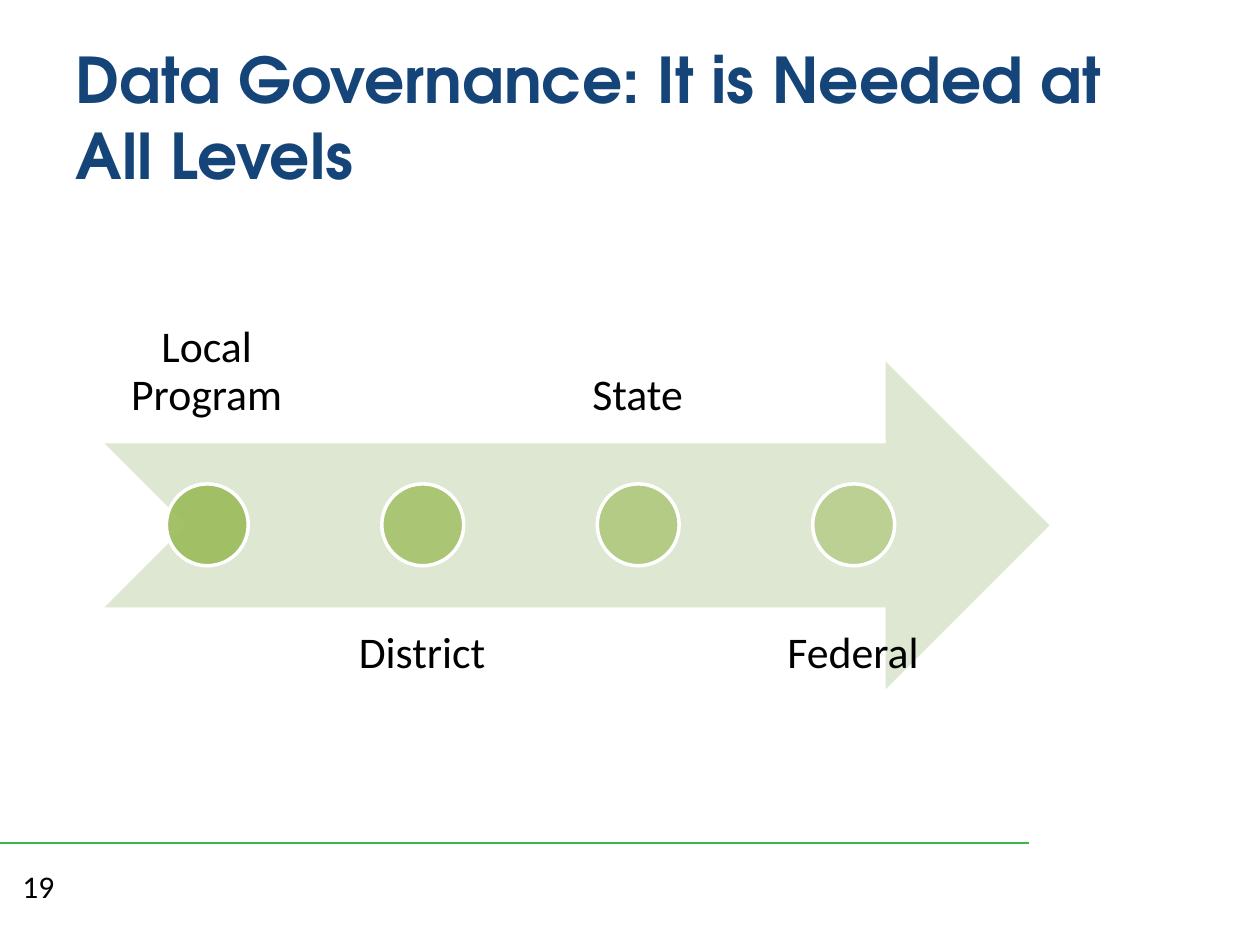
from pptx import Presentation
from pptx.dml.color import RGBColor
from pptx.enum.shapes import MSO_CONNECTOR, MSO_SHAPE
from pptx.enum.text import MSO_ANCHOR, MSO_AUTO_SIZE, PP_ALIGN
from pptx.oxml.ns import qn
from pptx.util import Inches, Pt
from lxml.etree import SubElement


def color(code):
    return RGBColor.from_string(code)


def apply(target, values):
    for name, value in values.items():
        setattr(target, name, value)


class Deck:
    HEAD = {"name": "TeX Gyre Adventor", "size": Pt(36), "bold": True}
    LABEL = {"name": "Calibri", "size": Pt(25)}
    PAGE = {"name": "Calibri", "size": Pt(18)}
    BLUE, GREEN, PALE, RULE = "154578", "9BBB59", "DEE7D1", "39B54A"
    BLACK, WHITE = "000000", "FFFFFF"

    def __init__(self):
        self.prs = Presentation()
        apply(self.prs, {"slide_width": Inches(10), "slide_height": Inches(7.5)})
        self.slide = self.prs.slides.add_slide(self.prs.slide_layouts[5])

    def fill_text(self, shape, text, font, ink, frame, para):
        apply(shape.text_frame, {"text": text, "word_wrap": True, **frame})
        line = shape.text_frame.paragraphs[0]
        apply(line, para)
        run = line.runs[0]
        apply(run.font, font)
        run.font.color.rgb = color(ink)

    def title(self, text, box):
        shape = self.slide.shapes.title
        apply(shape, dict(zip(("left", "top", "width", "height"), map(Inches, box))))
        self.fill_text(shape, text, self.HEAD, self.BLUE,
                       {"vertical_anchor": MSO_ANCHOR.MIDDLE},
                       {"alignment": PP_ALIGN.LEFT})

    def text(self, text, box, font, frame, para):
        shape = self.slide.shapes.add_textbox(*map(Inches, box))
        self.fill_text(shape, text, font, self.BLACK, frame, para)

    def label(self, text, box, anchor):
        sides = ("left", "top", "right", "bottom")
        frame = {f"margin_{side}": Inches(0.19) for side in sides}
        self.text(text, box, self.LABEL, {**frame, "vertical_anchor": anchor},
                  {"alignment": PP_ALIGN.CENTER, "line_spacing": 0.9})

    def shape(self, kind, box, fill, alpha=100, edge=None):
        shape = self.slide.shapes.add_shape(kind, *map(Inches, box))
        shape.shadow.inherit = False
        shape.fill.solid()
        shape.fill.fore_color.rgb = color(fill)
        if alpha < 100:
            tint = shape._element.spPr.find(qn("a:solidFill"))[0]
            SubElement(tint, qn("a:alpha"), val=str(alpha * 1000))
        if edge:
            shape.line.color.rgb = color(edge)
            shape.line.width = Pt(2)
        else:
            shape.line.fill.background()

    def rule(self, ends):
        line = self.slide.shapes.add_connector(
            MSO_CONNECTOR.STRAIGHT, *map(Inches, ends))
        line.line.color.rgb = color(self.RULE)
        line.line.width = Pt(1.5)
        SubElement(line._element.spPr, qn("a:effectLst"))


def main():
    deck = Deck()

    # Footer rule and page number
    deck.rule((0, 6.69, 8.17, 6.69))
    deck.text("19", (0.08, 6.83, 0.58, 0.42), deck.PAGE,
              {"auto_size": MSO_AUTO_SIZE.SHAPE_TO_FIT_TEXT}, {})

    # Title
    deck.title("Data Governance: It is Needed at All Levels", (0.5, 0.3, 9, 1.25))

    # Arrow behind the levels
    deck.shape(MSO_SHAPE.NOTCHED_RIGHT_ARROW, (0.83, 2.87, 7.5, 2.6), deck.PALE)

    # Levels: labels alternate above and below, dots fade
    levels = [("Local Program", 90), ("District", 77), ("State", 63), ("Federal", 50)]
    sides = [(0.92, MSO_ANCHOR.BOTTOM), (4.82, MSO_ANCHOR.TOP)]
    for i, (name, alpha) in enumerate(levels):
        left = 0.83 + 1.71 * i
        top, anchor = sides[i % 2]
        deck.label(name, (left, top, 1.62, 2.6), anchor)
        deck.shape(MSO_SHAPE.OVAL, (left + 0.49, 3.84, 0.65, 0.65),
                   deck.GREEN, alpha, deck.WHITE)

    deck.prs.save("out.pptx")


if __name__ == "__main__":
    main()
